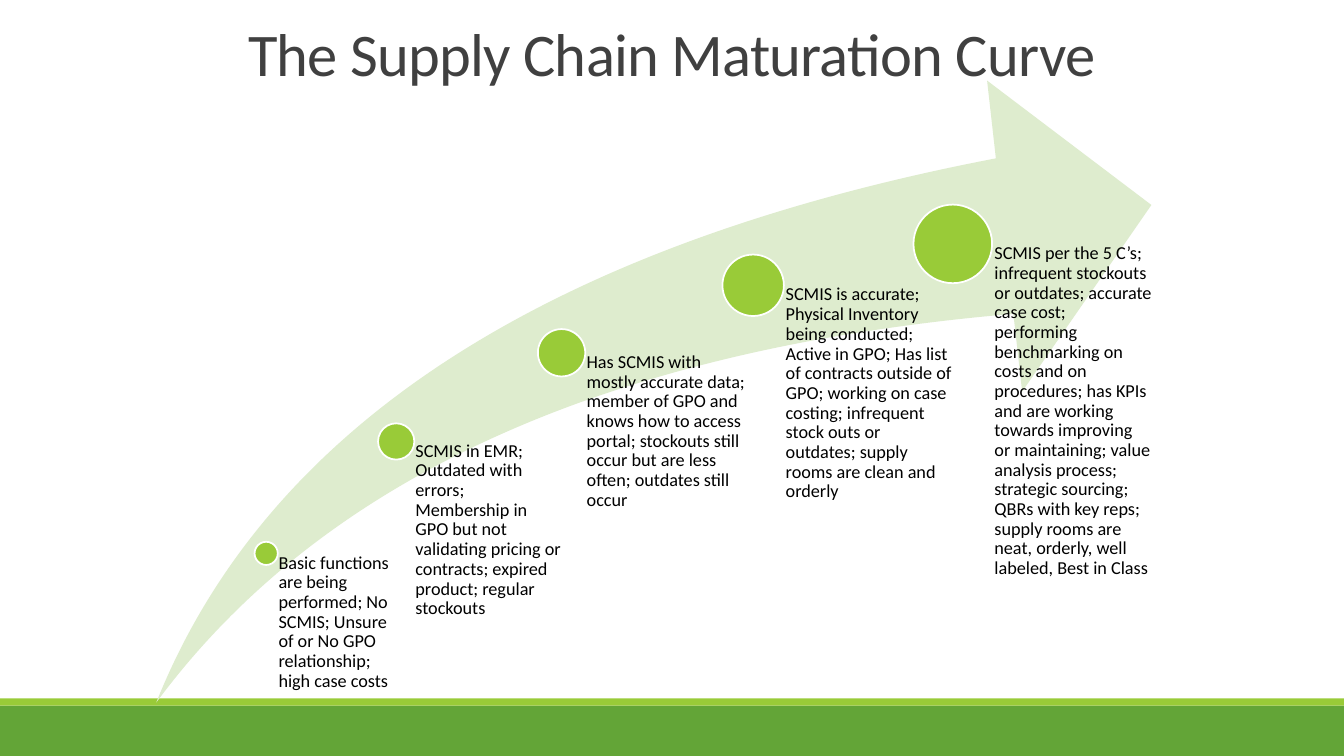
from dataclasses import dataclass

from pptx import Presentation
from pptx.dml.color import RGBColor
from pptx.enum.shapes import MSO_SHAPE as Preset
from pptx.enum.text import MSO_ANCHOR as Anchor, MSO_AUTO_SIZE as AutoSize, PP_ALIGN as Align
from pptx.shapes.autoshape import Shape
from pptx.slide import Slide
from pptx.util import Inches, Pt


@dataclass(frozen=True)
class Theme:
    font: str = "Calibri"
    title_size: float = 43.2
    stage_size: float = 13
    title_color: str = "404040"
    stage_color: str = "000000"
    dark_green: str = "63A537"
    bright_green: str = "99CB38"
    pale_green: str = "DEECCE"
    white: str = "FFFFFF"


@dataclass(frozen=True)
class Box:
    left: float
    top: float
    width: float
    height: float

    def lengths(self) -> list[Inches]:
        return [Inches(value) for value in (self.left, self.top, self.width, self.height)]


@dataclass(frozen=True)
class Stage:
    """A step on the curve: the dot's centre and diameter, and its text."""
    center_x: float
    center_y: float
    diameter: float
    text_width: float
    text: str


THEME = Theme()
SLIDE_WIDTH, SLIDE_HEIGHT = 13.33, 7.5
TITLE_BOX = Box(2.36, 0.23, 8.61, 0.7)
CURVE_BOX = Box(1.55, 0.8, 9.87, 6.17)
FOOTER_BANDS = (
    (Box(0, 7, SLIDE_WIDTH, 0.5), THEME.dark_green),
    (Box(0, 6.93, SLIDE_WIDTH, 0.07), THEME.bright_green),
)
STAGE_BOTTOM = 6.97
INSET_PER_DIAMETER = 0.53

STAGES = (
    Stage(2.64, 5.49, 0.23, 1.29,
          "Basic functions are being performed; No SCMIS; Unsure of or No GPO "
          "relationship; high case costs"),
    Stage(3.93, 4.38, 0.36, 1.64,
          "SCMIS in EMR; Outdated with errors; Membership in GPO but not validating "
          "pricing or contracts; expired product; regular stockouts"),
    Stage(5.57, 3.5, 0.47, 1.9,
          "Has SCMIS with mostly accurate data; member of GPO and knows how to access "
          "portal; stockouts still occur but are less often; outdates still occur"),
    Stage(7.47, 2.83, 0.61, 1.97,
          "SCMIS is accurate; Physical Inventory being conducted; Active in GPO; Has "
          "list of contracts outside of GPO; working on case costing; infrequent stock "
          "outs or outdates; supply rooms are clean and orderly"),
    Stage(9.45, 2.42, 0.78, 1.97,
          "SCMIS per the 5 C’s; infrequent stockouts or outdates; accurate case cost; "
          "performing benchmarking on costs and on procedures; has KPIs and are working "
          "towards improving or maintaining; value analysis process; strategic sourcing; "
          "QBRs with key reps; supply rooms are neat, orderly, well labeled, Best in Class"),
)


def set_all(target: object, values: dict[str, object]) -> None:
    for name, value in values.items():
        setattr(target, name, value)


def add_filled(slide: Slide, preset: Preset, box: Box, color: str) -> Shape:
    """Add a preset shape with a plain fill, no line and no shadow."""
    shape = slide.shapes.add_shape(preset, *box.lengths())
    shape.shadow.inherit = False
    shape.fill.solid()
    shape.fill.fore_color.rgb = RGBColor.from_string(color)
    shape.line.fill.background()
    return shape


def write_text(shape: Shape, text: str, size: float, color: str, spacing: float,
               frame_format: dict[str, object]) -> None:
    frame = shape.text_frame
    set_all(frame, {"auto_size": AutoSize.NONE, "word_wrap": True, **frame_format})
    paragraph = frame.paragraphs[0]
    set_all(paragraph, {"alignment": Align.LEFT, "line_spacing": spacing})
    run = paragraph.add_run()
    run.text = text
    set_all(run.font, {"name": THEME.font, "size": Pt(size)})
    run.font.color.rgb = RGBColor.from_string(color)


def add_title(slide: Slide, text: str) -> None:
    title = slide.shapes.title
    set_all(title, dict(zip(("left", "top", "width", "height"), TITLE_BOX.lengths())))
    write_text(title, text, THEME.title_size, THEME.title_color, 0.85,
               {"vertical_anchor": Anchor.BOTTOM, "margin_right": 0})
    run = title.text_frame.paragraphs[0].runs[0]
    run.font._element.set("spc", "-50")


def add_curve(slide: Slide) -> None:
    curve = add_filled(slide, Preset.SWOOSH_ARROW, CURVE_BOX, THEME.pale_green)
    for index in range(2):
        curve.adjustments[index] = 0.25


def add_stage(slide: Slide, stage: Stage) -> None:
    """Add a dot and a text box whose top left corner is the dot's centre."""
    radius = stage.diameter / 2
    dot_box = Box(stage.center_x - radius, stage.center_y - radius,
                  stage.diameter, stage.diameter)
    dot = add_filled(slide, Preset.OVAL, dot_box, THEME.bright_green)
    dot.line.color.rgb = RGBColor.from_string(THEME.white)
    dot.line.width = Pt(1.25)

    text_box = Box(stage.center_x, stage.center_y, stage.text_width,
                   STAGE_BOTTOM - stage.center_y)
    label = slide.shapes.add_textbox(*text_box.lengths())
    write_text(label, stage.text, THEME.stage_size, THEME.stage_color, 0.9, {
        "vertical_anchor": Anchor.TOP,
        "margin_left": Inches(stage.diameter * INSET_PER_DIAMETER),
        "margin_top": 0, "margin_right": 0, "margin_bottom": 0,
    })


def main() -> None:
    presentation = Presentation()
    set_all(presentation, {"slide_width": Inches(SLIDE_WIDTH),
                           "slide_height": Inches(SLIDE_HEIGHT)})
    slide = presentation.slides.add_slide(presentation.slide_layouts[5])
    for box, color in FOOTER_BANDS:
        add_filled(slide, Preset.RECTANGLE, box, color)
    add_title(slide, "The Supply Chain Maturation Curve")
    add_curve(slide)
    for stage in STAGES:
        add_stage(slide, stage)
    presentation.save("out.pptx")


if __name__ == "__main__":
    main()
